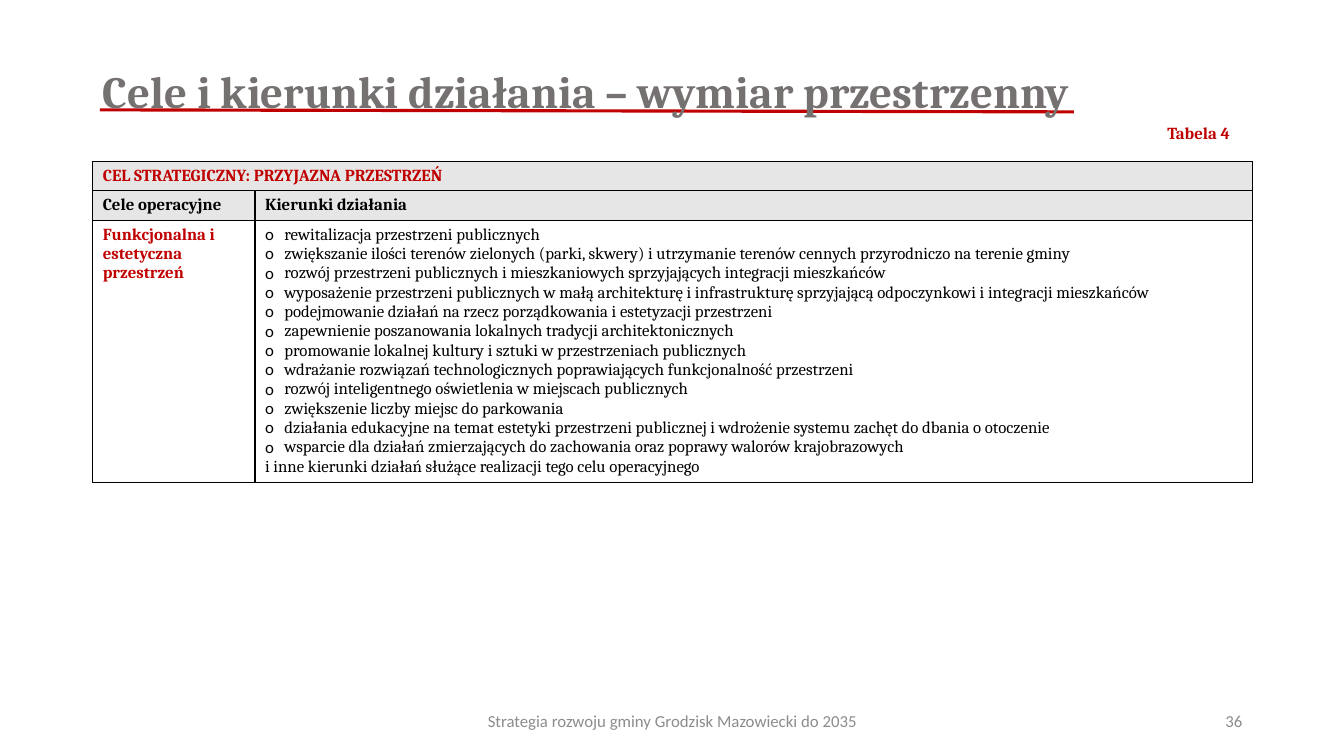
import pptx
import pptx.util
import pptx.dml.color
import pptx.enum.shapes
import pptx.enum.text
import pptx.oxml
import pptx.oxml.ns
from lxml import etree

PX = 9144
RED = "C00000"
BLACK = "000000"
HEADER_FILL = "E7E6E6"
TITLE_GRAY = "767171"
FOOTER_GRAY = "8C8C8C"
ALIGN = pptx.enum.text.PP_ALIGN
ANCHOR = pptx.enum.text.MSO_ANCHOR
COLUMN_WIDTHS = [161, 989]
ROW_HEIGHTS = [29, 29, 260]
DIRECTIONS = [
    "rewitalizacja przestrzeni publicznych",
    "zwiększanie ilości terenów zielonych (parki, skwery) i utrzymanie terenów cennych przyrodniczo na terenie gminy",
    "rozwój przestrzeni publicznych i mieszkaniowych sprzyjających integracji mieszkańców",
    "wyposażenie przestrzeni publicznych w małą architekturę i infrastrukturę sprzyjającą odpoczynkowi i integracji mieszkańców",
    "podejmowanie działań na rzecz porządkowania i estetyzacji przestrzeni",
    "zapewnienie poszanowania lokalnych tradycji architektonicznych",
    "promowanie lokalnej kultury i sztuki w przestrzeniach publicznych",
    "wdrażanie rozwiązań technologicznych poprawiających funkcjonalność przestrzeni",
    "rozwój inteligentnego oświetlenia w miejscach publicznych",
    "zwiększenie liczby miejsc do parkowania",
    "działania edukacyjne na temat estetyki przestrzeni publicznej i wdrożenie systemu zachęt do dbania o otoczenie",
    "wsparcie dla działań zmierzających do zachowania oraz poprawy walorów krajobrazowych",
]
CLOSING = "i inne kierunki działań służące realizacji tego celu operacyjnego"


def px(*lengths):
    return [length * PX for length in lengths]


def color(code):
    return pptx.dml.color.RGBColor.from_string(code)


def add_xml(parent, tag, **attributes):
    name = pptx.oxml.ns.qn(tag)
    return etree.SubElement(parent, name, attributes)


def format_text(frame, code, size=12, font="Cambria", bold=False, align=ALIGN.LEFT):
    for para in frame.paragraphs:
        para.alignment = align
        for span in para.runs:
            span.font.name = font
            span.font.size = pptx.util.Pt(size)
            span.font.bold = bold
            span.font.color.rgb = color(code)


def add_title(page, text):
    title = page.shapes.title
    title.left, title.top, title.width, title.height = px(92, 28, 1150, 104)
    frame = title.text_frame
    frame.text = text
    frame.auto_size = pptx.enum.text.MSO_AUTO_SIZE.NONE
    frame.vertical_anchor = ANCHOR.MIDDLE
    frame.paragraphs[0].line_spacing = pptx.util.Pt(52.8)
    format_text(frame, TITLE_GRAY, 32, bold=True)


def add_title_rule(page):
    straight = pptx.enum.shapes.MSO_CONNECTOR.STRAIGHT
    rule = page.shapes.add_connector(straight, *px(99, 109, 1065, 111))
    rule.line.color.rgb = color(RED)
    rule.line.width = pptx.util.Pt(2.25)
    add_xml(rule.element.spPr, "a:effectLst")
    page.shapes.title.element.addprevious(rule.element)


def add_label(page, place, text, code, anchor=ANCHOR.TOP, **style):
    box = page.shapes.add_textbox(*px(*place))
    frame = box.text_frame
    frame.word_wrap = True
    frame.vertical_anchor = anchor
    frame.text = text
    format_text(frame, code, **style)


def add_borders(cell):
    properties = cell._tc.get_or_add_tcPr()
    for side in ("a:lnL", "a:lnR", "a:lnT", "a:lnB"):
        line = add_xml(properties, side, w=str(pptx.util.Pt(1)))
        add_xml(add_xml(line, "a:solidFill"), "a:srgbClr", val=BLACK)


def fill_cell(cell, text, code, fill=None, bold=True):
    if fill:
        cell.fill.solid()
        cell.fill.fore_color.rgb = color(fill)
    else:
        cell.fill.background()
    cell.text_frame.text = text
    format_text(cell.text_frame, code, bold=bold)


def add_bullet(para):
    properties = para._p.get_or_add_pPr()
    indent = 19 * PX
    properties.set("marL", str(indent))
    properties.set("indent", str(-indent))
    add_xml(properties, "a:buFont", typeface="Calibri")
    add_xml(properties, "a:buChar", char="o")


def add_goal_table(page):
    place = px(92, 160, sum(COLUMN_WIDTHS), sum(ROW_HEIGHTS))
    table = page.shapes.add_table(len(ROW_HEIGHTS), len(COLUMN_WIDTHS), *place).table
    table.first_row = False
    table.horz_banding = False
    for column, width in zip(table.columns, COLUMN_WIDTHS):
        column.width = width * PX
    for row, height in zip(table.rows, ROW_HEIGHTS):
        row.height = height * PX
    for cell in table.iter_cells():
        add_borders(cell)
    table.cell(0, 0).merge(table.cell(0, 1))
    fill_cell(table.cell(0, 0), "CEL STRATEGICZNY: PRZYJAZNA PRZESTRZEŃ", RED, HEADER_FILL)
    fill_cell(table.cell(1, 0), "Cele operacyjne", BLACK, HEADER_FILL)
    fill_cell(table.cell(1, 1), "Kierunki działania", BLACK, HEADER_FILL)
    fill_cell(table.cell(2, 0), "Funkcjonalna i estetyczna przestrzeń", RED)
    directions = table.cell(2, 1)
    fill_cell(directions, "\n".join(DIRECTIONS + [CLOSING]), BLACK, bold=False)
    for para in directions.text_frame.paragraphs[:-1]:
        add_bullet(para)


def main():
    deck = pptx.Presentation()
    deck.slide_width, deck.slide_height = px(1333, 750)
    page = deck.slides.add_slide(deck.slide_layouts.get_by_name("Title Only"))
    add_title(page, "Cele i kierunki działania – wymiar przestrzenny")
    add_title_rule(page)
    add_goal_table(page)
    add_label(page, (442, 695, 450, 40), "Strategia rozwoju gminy Grodzisk Mazowiecki do 2035",
              FOOTER_GRAY, ANCHOR.MIDDLE, font="Calibri", align=ALIGN.CENTER)
    add_label(page, (942, 695, 300, 40), "36",
              FOOTER_GRAY, ANCHOR.MIDDLE, font="Calibri", align=ALIGN.RIGHT)
    add_label(page, (1148, 117, 188, 30), "Tabela 4", RED, bold=True)
    deck.save("out.pptx")


if __name__ == "__main__":
    main()
